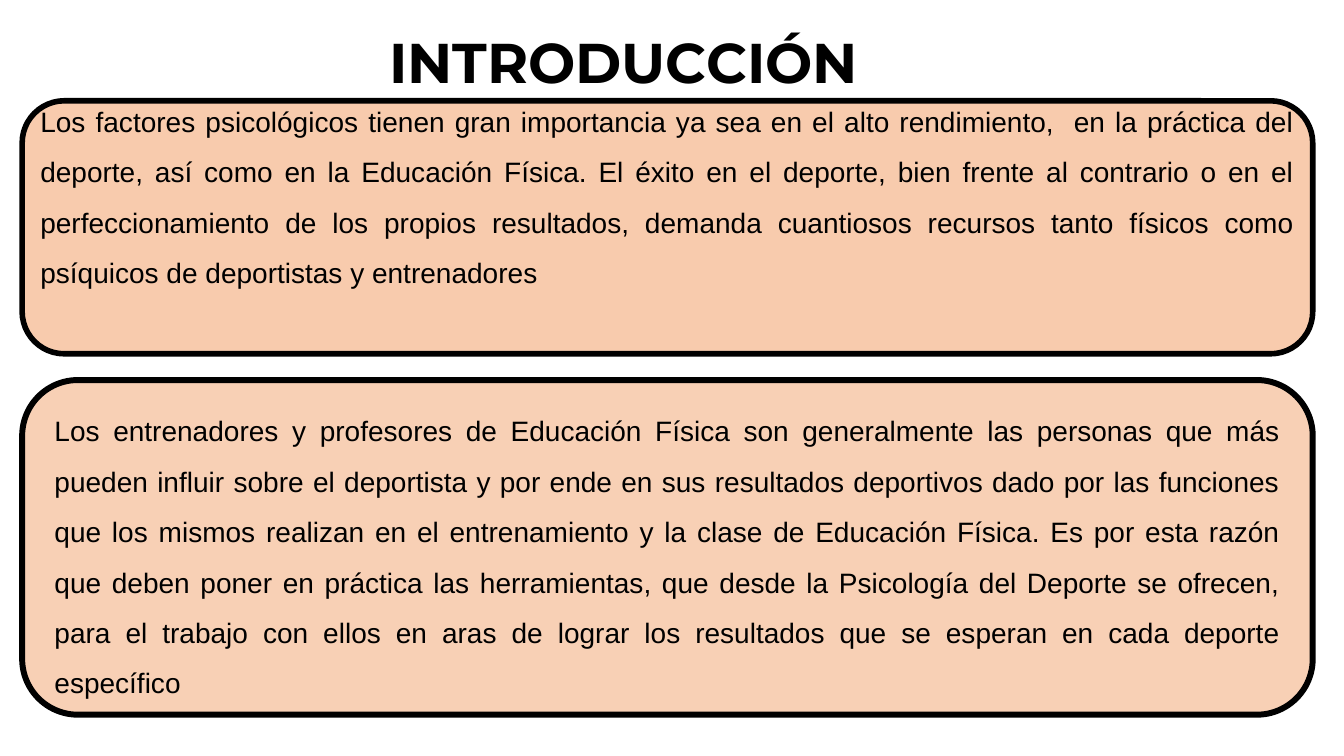
from pptx import Presentation
from pptx.dml.color import RGBColor
from pptx.enum.shapes import MSO_SHAPE
from pptx.enum.text import MSO_ANCHOR, PP_ALIGN
from pptx.oxml.ns import qn
from pptx.util import Inches, Pt
from lxml.etree import SubElement

INTRO = (
    "Los factores psicológicos tienen gran importancia ya sea en el alto "
    "rendimiento,  en la práctica del deporte, así como en la Educación Física. "
    "El éxito en el deporte, bien frente al contrario o en el perfeccionamiento "
    "de los propios resultados, demanda cuantiosos recursos tanto físicos como "
    "psíquicos de deportistas y entrenadores"
)
ROLE = (
    "Los entrenadores y profesores de Educación Física son generalmente las "
    "personas que más pueden influir sobre el deportista y por ende en sus "
    "resultados deportivos dado por las funciones que los mismos realizan en el "
    "entrenamiento y la clase de Educación Física. Es por esta razón que deben "
    "poner en práctica las herramientas, que desde la Psicología del Deporte se "
    "ofrecen, para el trabajo con ellos en aras de lograr los resultados que se "
    "esperan en cada deporte específico"
)


def color(code):
    return RGBColor.from_string(code)


def write(shape, text, font="Arial", size=20, bold=False,
          align=PP_ALIGN.JUSTIFY, anchor=MSO_ANCHOR.TOP, space=1.5):
    frame = shape.text_frame
    frame.word_wrap = True
    frame.vertical_anchor = anchor
    frame.margin_left = frame.margin_right = 0
    frame.margin_top = frame.margin_bottom = 0
    para = frame.paragraphs[0]
    para.alignment = align
    para.line_spacing = space
    run = para.add_run()
    run.text = text
    run.font.name = font
    run.font.size = Pt(size)
    run.font.bold = bold
    run.font.color.rgb = color("000000")


def place(shape, left, top, width, height):
    shape.left, shape.top = Inches(left), Inches(top)
    shape.width, shape.height = Inches(width), Inches(height)


def heading(slide, text, box):
    title = slide.shapes.title
    place(title, *box)
    write(title, text, font="Montserrat", size=40, bold=True,
          align=PP_ALIGN.CENTER, anchor=MSO_ANCHOR.MIDDLE, space=1)


def panel(slide, text, box, kind, line, inset, shift, alpha=100):
    left, top, width, height = box
    card = slide.shapes.add_shape(kind, *map(Inches, box))
    card.shadow.inherit = False
    card.fill.solid()
    card.fill.fore_color.rgb = color("F8CBAD")
    if alpha < 100:
        tint = card.fill._xPr.find(qn("a:solidFill"))[0]
        SubElement(tint, qn("a:alpha")).set("val", str(alpha * 1000))
    card.line.color.rgb = color("000000")
    card.line.width = Pt(line)
    area = (left + inset, top + shift, width - 2 * inset, height - shift)
    label = slide.shapes.add_textbox(*map(Inches, area))
    write(label, text)


def main():
    deck = Presentation()
    deck.slide_width, deck.slide_height = Inches(13.33), Inches(7.5)
    slide = deck.slides.add_slide(deck.slide_layouts[5])
    heading(slide, "INTRODUCCIÓN", (1.14, 0.22, 10.09, 0.77))
    panel(slide, ROLE, (0.22, 3.77, 12.8, 3.32),
          MSO_SHAPE.FLOWCHART_ALTERNATE_PROCESS, 4.25, 0.32, 0.17, alpha=90)
    panel(slide, INTRO, (0.22, 1, 12.8, 2.51),
          MSO_SHAPE.ROUNDED_RECTANGLE, 4, 0.18, -0.13)
    deck.save("out.pptx")


if __name__ == "__main__":
    main()
